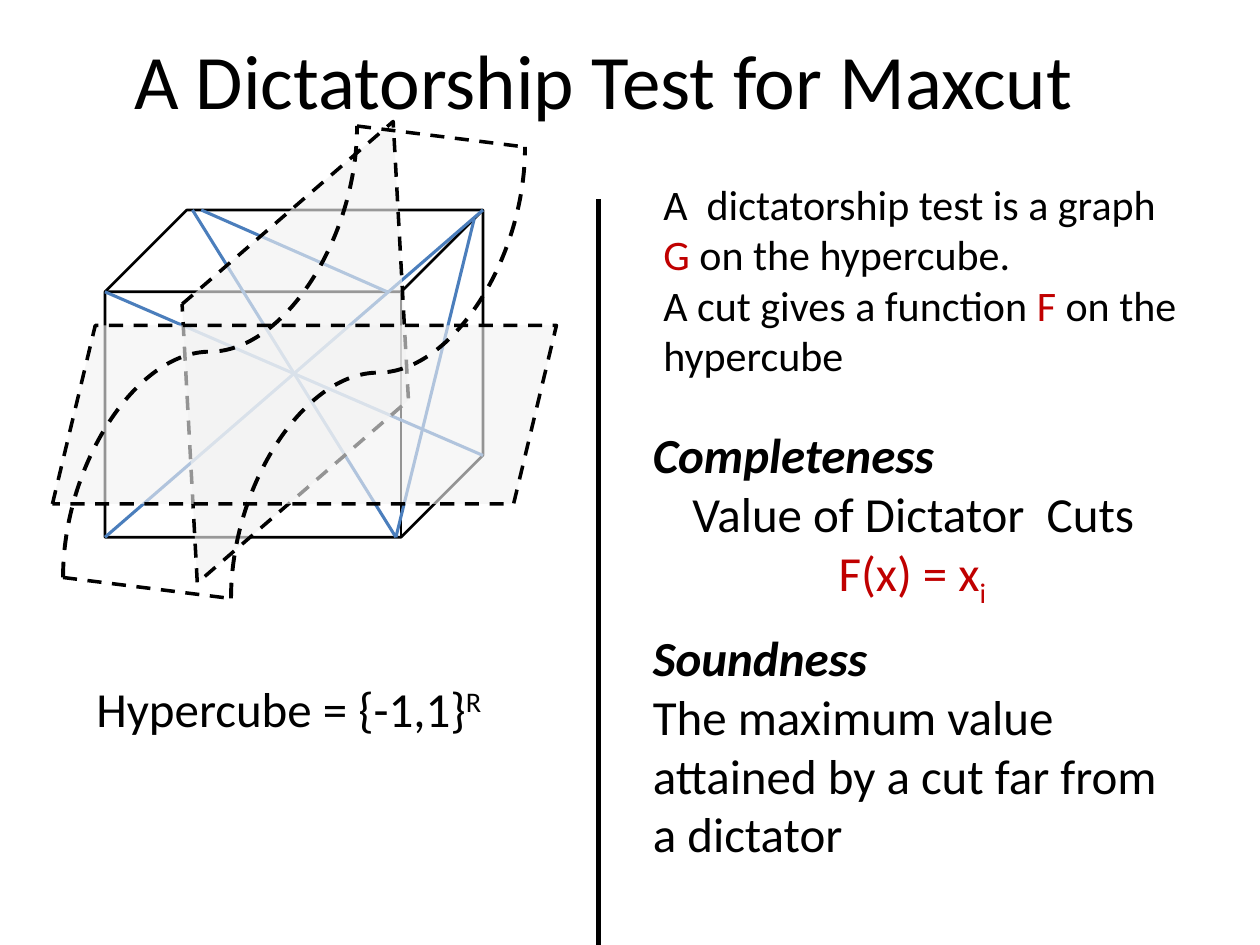
from dataclasses import dataclass

from pptx import Presentation
from pptx.dml.color import RGBColor
from pptx.enum.dml import MSO_LINE
from pptx.enum.shapes import MSO_CONNECTOR as CONN, MSO_SHAPE as SHAPE
from pptx.enum.text import MSO_ANCHOR, MSO_AUTO_SIZE, PP_ALIGN
from pptx.oxml.ns import qn
from pptx.oxml.xmlchemy import OxmlElement
from pptx.util import Pt


@dataclass(frozen=True)
class Theme:
    font: str = "Calibri"
    ink: str = "000000"
    accent: str = "C00000"
    edge: str = "4B7EBC"
    plane: str = "F2F2F2"
    title: float = 44
    body: float = 28
    small: float = 24


T = Theme()


def add_run(p, text, size=T.body, color=T.ink, bold=False, italic=False, baseline=0):
    r = p.add_run()
    r.text = text
    f = r.font
    f.name, f.size, f.bold, f.italic = T.font, Pt(size), bold, italic
    f.color.rgb = RGBColor.from_string(color)
    if baseline:
        r._r.get_or_add_rPr().set("baseline", str(baseline * 1000))


def add_text(s, box, paragraphs, size=T.body, wrap=True):
    tf = s.shapes.add_textbox(*map(Pt, box)).text_frame
    tf.word_wrap = wrap
    tf.auto_size = MSO_AUTO_SIZE.SHAPE_TO_FIT_TEXT
    for i, (align, runs) in enumerate(paragraphs):
        p = tf.add_paragraph() if i else tf.paragraphs[0]
        p.alignment = align
        for text, fmt in runs:
            add_run(p, text, size=size, **fmt)


def style_line(line, color, width, dash=False):
    line.color.rgb = RGBColor.from_string(color)
    line.width = Pt(width)
    if dash:
        line.dash_style = MSO_LINE.DASH


def add_line(shapes, start, end, color=T.ink, width=2, dash=False, kind=CONN.STRAIGHT):
    c = shapes.add_connector(kind, *map(Pt, (*start, *end)))
    style_line(c.line, color, width, dash)
    c.element.spPr.append(OxmlElement("a:effectLst"))
    return c


def add_title(s, box, text):
    sp = s.shapes.title
    sp.left, sp.top, sp.width, sp.height = map(Pt, box)
    tf = sp.text_frame
    tf.vertical_anchor = MSO_ANCHOR.MIDDLE
    p = tf.paragraphs[0]
    p.alignment = PP_ALIGN.CENTER
    add_run(p, text, size=T.title)


def add_hypercube(s, box):
    x, y, w, h = box
    depth = h / 4
    front = w - depth
    shapes = s.shapes.add_group_shape().shapes
    cube = shapes.add_shape(SHAPE.CUBE, *map(Pt, box))
    cube.shadow.inherit = False
    cube.fill.background()
    style_line(cube.line, T.ink, 1.5)
    graph_edges = [
        ((0, depth), (w, h - depth)),
        ((55, 0), (front - 8, depth)),
        ((50, 0), (front - 3, h)),
        ((w, 0), (0, h)),
        ((w - 5, 5), (front - 3, h)),
    ]
    for (x1, y1), (x2, y2) in graph_edges:
        add_line(shapes, (x + x1, y + y1), (x + x2, y + y2), T.edge, 1.75)


def add_plane(s, box, kind, alpha, rotation=0, slant=None):
    sp = s.shapes.add_shape(kind, *map(Pt, box))
    sp.shadow.inherit = False
    sp.rotation = rotation
    if slant is not None:
        sp.adjustments[0] = slant
    sp.fill.solid()
    sp.fill.fore_color.rgb = RGBColor.from_string(T.plane)
    a = OxmlElement("a:alpha")
    a.set("val", str(alpha * 1000))
    sp.element.spPr.find(qn("a:solidFill")).find(qn("a:srgbClr")).append(a)
    style_line(sp.line, T.ink, 2, dash=True)


def add_curved_sheet(s, box, shift):
    x, y, w, h = box
    dx, dy = shift
    for ox, oy in ((0, 0), shift):
        cx, cy = x + ox + w / 2, y + oy + h / 2
        c = add_line(s.shapes, (cx + h / 2, cy + w / 2), (cx - h / 2, cy - w / 2),
                     width=2.25, dash=True, kind=CONN.CURVE)
        c.element.spPr.find(qn("a:xfrm")).set("rot", str(90 * 60000))
    for px, py in ((x + w, y), (x, y + h)):
        add_line(s.shapes, (px, py), (px + dx, py + dy), dash=True)


def add_diagram(s, box):
    x, y, w, h = box
    add_hypercube(s, (x + 30, y + 62, 216, 187))
    add_plane(s, (x + 68.5, y, 140.5, 286.5), SHAPE.DIAMOND, 63, rotation=23)
    add_plane(s, (x, y + 128, w, 102), SHAPE.PARALLELOGRAM, 61, slant=0.24)
    add_curved_sheet(s, (x + 6, y + 14, 168, 258), (96, 12))
    caption = [(None, [("Hypercube = {-1,1}", {}), ("R", {"baseline": 30})])]
    add_text(s, (x + 18, y + h - 41, 238, 41), caption, wrap=False)


def add_explanation(s, box):
    x, y, w, h = box
    red = {"color": T.accent}
    heading = {"bold": True, "italic": True}
    add_text(s, (x + 6, y, w - 6, 124), [
        (None, [("A  dictatorship test is a graph ", {}), ("G", red),
                (" on the hypercube.", {})]),
        (None, [("A cut gives a function ", {}), ("F", red), (" on the hypercube", {})]),
    ], size=T.small)
    add_text(s, (x, y + 140.5, w, 109), [
        (None, [("Completeness", heading)]),
        (PP_ALIGN.CENTER, [("Value of Dictator  Cuts ", {})]),
        (PP_ALIGN.CENTER, [("F(x) = x", red), ("i  ", {**red, "baseline": -25})]),
    ])
    add_text(s, (x, y + h - 143, w, 143), [
        (None, [("Soundness", heading)]),
        (None, [("The maximum value attained by a cut far from a dictator", {})]),
    ])


def main():
    prs = Presentation()
    prs.slide_width, prs.slide_height = Pt(720), Pt(540)
    s = prs.slides.add_slide(prs.slide_layouts[5])
    add_title(s, (12, 0, 666, 90), "A Dictatorship Test for Maxcut")
    add_diagram(s, (30, 58, 288, 367))
    add_line(s.shapes, (342, 114), (342, 540), width=2.5)
    add_explanation(s, (366, 98.5, 318, 399.5))
    prs.save("out.pptx")


if __name__ == "__main__":
    main()
